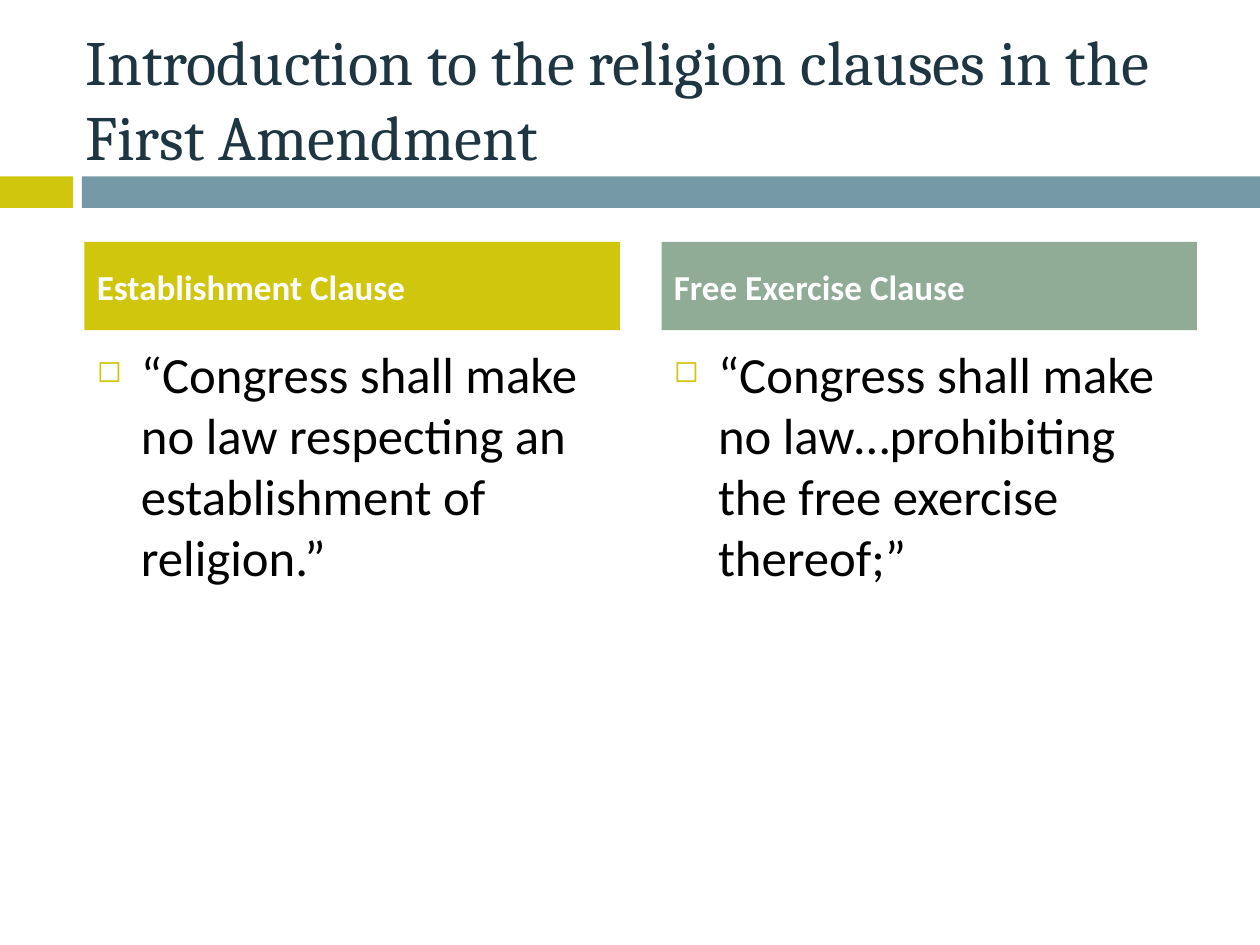
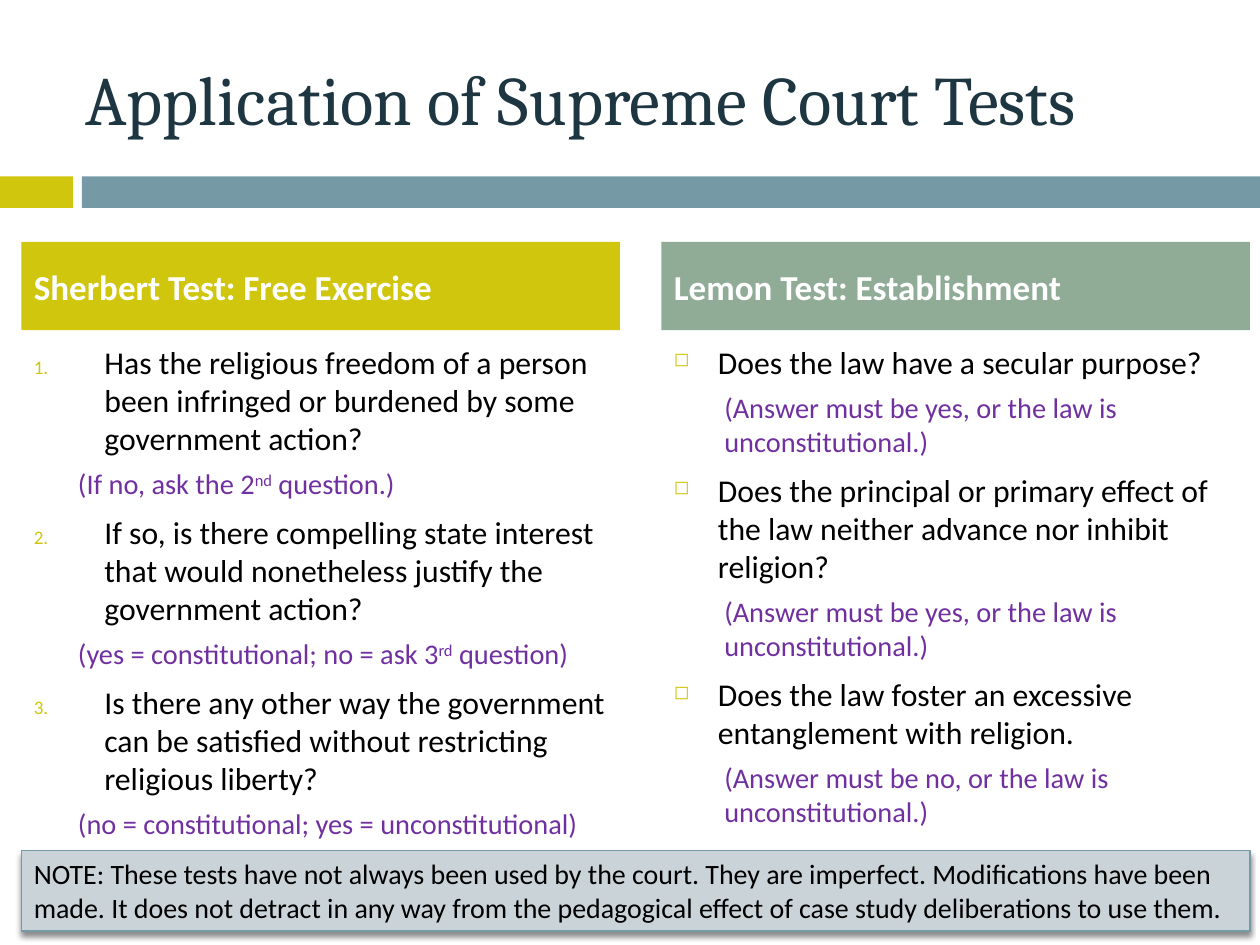
from pptx import Presentation
from pptx.dml.color import RGBColor
from pptx.enum.shapes import MSO_SHAPE as Shape
from pptx.enum.text import MSO_ANCHOR as Anchor, PP_ALIGN as Align
from pptx.oxml import parse_xml
from pptx.oxml.ns import nsdecls
from pptx.util import Emu, Inches, Pt

LIME = RGBColor(0xCF, 0xC6, 0x0D)
STEEL = RGBColor(0x75, 0x9A, 0xA5)
SAGE = RGBColor(0x90, 0xAC, 0x97)
PALE_STEEL = RGBColor(0xCA, 0xD4, 0xD8)
NAVY = RGBColor(0x1D, 0x36, 0x41)
PURPLE = RGBColor(0x70, 0x30, 0xA0)
BLACK = RGBColor(0, 0, 0)
WHITE = RGBColor(0xFF, 0xFF, 0xFF)

HEADING_FONT, BODY_FONT = "Cambria", "Calibri"
SQUARE = '<a:buChar {} char="◻"/>'
NUMBER = '<a:buAutoNum {} type="arabicPeriod"/>'
RIGHT_COLUMN = 5.25


def write(frame, text, first=False, size=18.1, font=BODY_FONT, color=BLACK,
          bold=False, before=0, level=0, indent=0, bullet=None):
    """Add one paragraph; text between ^ marks is superscript."""
    paragraph = frame.paragraphs[0] if first else frame.add_paragraph()
    paragraph.alignment = Align.LEFT
    paragraph.level = level
    paragraph.space_before = Pt(before)
    properties = paragraph._p.get_or_add_pPr()
    properties.set("marL", str(Inches(indent)))
    properties.set("indent", str(-Inches(indent) if bullet else 0))
    if bullet:
        for xml in (f'<a:buClr {{}}><a:srgbClr val="{LIME}"/></a:buClr>',
                    '<a:buSzPct {} val="60000"/>', bullet):
            properties.append(parse_xml(xml.format(nsdecls("a"))))
    for position, part in enumerate(text.split("^")):
        run = paragraph.add_run()
        run.text = part
        run.font.size, run.font.name = Pt(size), font
        run.font.bold, run.font.color.rgb = bold, color
        if position % 2:
            run.font._element.set("baseline", "30000")


class Deck:
    def __init__(self):
        self.presentation = Presentation()
        self.presentation.slide_width = Inches(10)
        self.presentation.slide_height = Inches(7.5)
        self.slide = None

    def start_slide(self, title, size):
        layout = self.presentation.slide_layouts[6]
        self.slide = self.presentation.slides.add_slide(layout)
        self.block(0, 1.4, 0.58, 0.25, LIME)
        self.block(0.65, 1.4, 9.35, 0.25, STEEL)
        frame = self.text_area(0.58, 0.3, 8.92, 0.95, Anchor.MIDDLE)
        write(frame, title, first=True, size=size, font=HEADING_FONT, color=NAVY)

    def block(self, left, top, width, height, fill):
        block = self.slide.shapes.add_shape(
            Shape.RECTANGLE, *map(Inches, (left, top, width, height)))
        block.shadow.inherit = False
        block.fill.solid()
        block.fill.fore_color.rgb = fill
        block.line.fill.background()
        block.text_frame.word_wrap = True
        return block

    def text_area(self, left, top, width, height, anchor=Anchor.TOP):
        box = self.slide.shapes.add_textbox(
            *map(Inches, (left, top, width, height)))
        box.text_frame.word_wrap = True
        box.text_frame.vertical_anchor = anchor
        return box.text_frame

    def column(self, left, width, heading, fill, points, size=18.1,
               bullet=SQUARE, indent=0.35, answer_indent=0.4):
        """Draw a heading band over (question, answer) points; answers may be None."""
        band = self.block(left, 1.92, width, 0.7, fill).text_frame
        band.vertical_anchor = Anchor.MIDDLE
        write(band, heading, first=True, size=20, color=WHITE, bold=True, before=7)
        body = self.text_area(left, 2.67, width, 3.92)
        for position, (question, answer) in enumerate(points):
            write(body, question, first=position == 0, size=size, before=7,
                  indent=indent, bullet=bullet)
            if answer:
                write(body, answer, size=16.2, color=PURPLE, before=5.5,
                      level=1, indent=answer_indent)

    def note(self, text):
        note = self.block(0.17, 6.75, 9.75, 0.64, PALE_STEEL)
        note.line.color.rgb = STEEL
        note.line.width = Pt(0.79)
        effects = note._element.spPr.find(
            "{http://schemas.openxmlformats.org/drawingml/2006/main}effectLst")
        effects.append(parse_xml(
            f'<a:outerShdw {nsdecls("a")} blurRad="{Pt(3)}" dist="{Emu(Pt(2.4))}" '
            'dir="5400000" rotWithShape="0"><a:srgbClr val="000000">'
            '<a:alpha val="45000"/></a:srgbClr></a:outerShdw>'))
        note.text_frame.vertical_anchor = Anchor.TOP
        write(note.text_frame, text, first=True, size=16)


def build_religion_clauses(deck):
    deck.start_slide("Introduction to the religion clauses in the First Amendment", 36)
    deck.column(0.67, 4.25, "Establishment Clause", LIME, [
        ("“Congress shall make no law respecting an establishment of religion.”", None),
    ], size=29)
    deck.column(RIGHT_COLUMN, 4.25, "Free Exercise Clause", SAGE, [
        ("“Congress shall make no law…prohibiting the free exercise thereof;”", None),
    ], size=29)


def build_court_tests(deck):
    deck.start_slide("Application of Supreme Court Tests", 39.6)
    deck.column(0.17, 4.75, "Sherbert Test: Free Exercise", LIME, [
        ("Has the religious freedom of a person been infringed or burdened by "
         "some government action?",
         "(If no, ask the 2^nd^ question.)"),
        ("If so, is there compelling state interest that would nonetheless "
         "justify the government action?",
         "(yes = constitutional; no = ask 3^rd^ question)"),
        ("Is there any other way the government can be satisfied without "
         "restricting religious liberty?",
         "(no = constitutional; yes = unconstitutional)"),
    ], bullet=NUMBER, indent=0.56, answer_indent=0.35)
    required = "(Answer must be {}, or the law is unconstitutional.)"
    deck.column(RIGHT_COLUMN, 4.67, "Lemon Test: Establishment", SAGE, [
        ("Does the law have a secular purpose?", required.format("yes")),
        ("Does the principal or primary effect of the law neither advance nor "
         "inhibit religion?", required.format("yes")),
        ("Does the law foster an excessive entanglement with religion.",
         required.format("no")),
    ])
    deck.note("NOTE: These tests have not always been used by the court. They are "
              "imperfect. Modifications have been made. It does not detract in any "
              "way from the pedagogical effect of case study deliberations to use them.")


def main():
    deck = Deck()
    build_religion_clauses(deck)
    build_court_tests(deck)
    deck.presentation.save("out.pptx")


if __name__ == "__main__":
    main()
